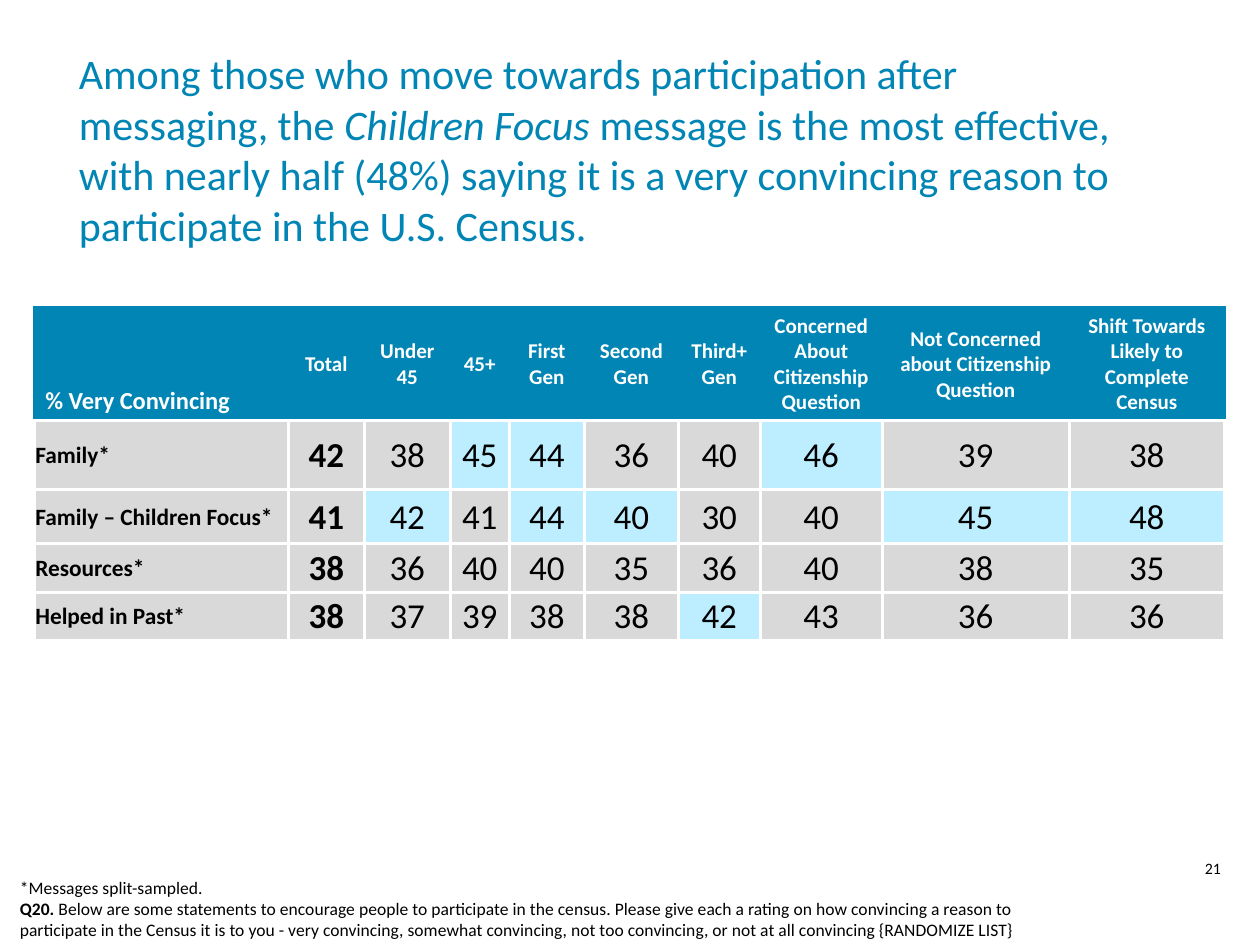
from dataclasses import dataclass

from pptx import Presentation
from pptx.dml.color import RGBColor
from pptx.enum.text import MSO_ANCHOR, MSO_AUTO_SIZE, PP_ALIGN
from pptx.oxml import parse_xml
from pptx.oxml.ns import nsdecls
from pptx.util import Pt


@dataclass(frozen=True)
class Theme:
    font: str = "Calibri"
    blue: str = "0085B4"
    highlight: str = "BDEEFF"
    grey: str = "D9D9D9"
    white: str = "FFFFFF"
    black: str = "000000"
    title_size: float = 18
    corner_size: float = 10.5
    header_size: float = 9
    message_size: float = 10
    score_size: float = 15
    note_size: float = 7.5
    page_size: float = 6.8
    border: float = 1.5


THEME = Theme()

TITLE = [
    ("Among those who move towards participation after messaging, the ", {}),
    ("Children Focus ", {"italic": True}),
    ("message is the most effective, with nearly half (48%) saying it is a very "
     "convincing reason to participate in the U.S. Census.", {}),
]
NOTES = [
    [("*Messages split-sampled.", {})],
    [("Q20. ", {"bold": True}),
     ("Below are some statements to encourage people to participate in the census. "
      "Please give each a rating on how convincing a reason to participate in the Census "
      "it is to you - very convincing, somewhat convincing, not too convincing, or not at "
      "all convincing {RANDOMIZE LIST}", {})],
]
HEADERS = ["% Very Convincing", "Total", "Under 45", "45+", "First Gen", "Second Gen",
           "Third+ Gen", "Concerned About Citizenship Question",
           "Not Concerned about Citizenship Question",
           "Shift Towards Likely to Complete Census"]
SCORES = {
    "Family*": [42, 38, 45, 44, 36, 40, 46, 39, 38],
    "Family – Children Focus*": [41, 42, 41, 44, 40, 30, 40, 45, 48],
    "Resources*": [38, 36, 40, 40, 35, 36, 40, 38, 35],
    "Helped in Past*": [38, 37, 39, 38, 38, 42, 43, 36, 36],
}
COLUMN_WIDTHS = [109, 32.5, 36.9, 25.3, 32.2, 40.3, 35.1, 52.3, 80.1, 66.6]
ROW_HEIGHTS = [48.4, 29.5, 23.1, 20.9, 20.5]


def set_attributes(target, values):
    for name, value in values.items():
        setattr(target, name, value)


def write_runs(p, runs, size, color, align=PP_ALIGN.LEFT):
    p.alignment = align
    for text, extra in runs:
        r = p.add_run()
        r.text = text
        set_attributes(r.font, {"name": THEME.font, "size": Pt(size), **extra})
        r.font.color.rgb = RGBColor.from_string(color)


def add_title(s):
    title = s.shapes.title
    set_attributes(title, {"left": Pt(26.6), "top": Pt(32.4),
                           "width": Pt(460), "height": Pt(62.6)})
    tf = title.text_frame
    set_attributes(tf, {"word_wrap": True, "auto_size": MSO_AUTO_SIZE.NONE,
                        "vertical_anchor": MSO_ANCHOR.MIDDLE})
    write_runs(tf.paragraphs[0], TITLE, THEME.title_size, THEME.blue)


def add_text(s, box, paragraphs, size, align=PP_ALIGN.LEFT):
    tf = s.shapes.add_textbox(*map(Pt, box)).text_frame
    tf.word_wrap = True
    for i, runs in enumerate(paragraphs):
        p = tf.add_paragraph() if i else tf.paragraphs[0]
        write_runs(p, runs, size, THEME.black, align)


def set_borders(cell, colors):
    """Draw the cell edges; colors maps L, R, T and B, in that order."""
    tcPr = cell._tc.get_or_add_tcPr()
    for side, color in colors.items():
        tcPr.append(parse_xml(
            f'<a:ln{side} {nsdecls("a")} w="{Pt(THEME.border)}"><a:solidFill>'
            f'<a:srgbClr val="{color}"/></a:solidFill></a:ln{side}>'))


def fill_cell(cell, text, size, bold, is_header, is_label, fill):
    edge = THEME.blue if is_header else THEME.white
    set_borders(cell, {"L": edge, "R": edge, "T": edge, "B": THEME.white})
    cell.fill.solid()
    cell.fill.fore_color.rgb = RGBColor.from_string(fill)
    side, top, bottom = (4.9, 2.2, 2.2) if is_header else (0.6, 0.6, 0)
    set_attributes(cell, {
        "margin_left": Pt(side), "margin_right": Pt(side),
        "margin_top": Pt(top), "margin_bottom": Pt(bottom),
        "vertical_anchor": MSO_ANCHOR.BOTTOM if is_header and is_label else MSO_ANCHOR.MIDDLE,
    })
    write_runs(cell.text_frame.paragraphs[0], [(text, {"bold": bold})], size,
               THEME.white if is_header else THEME.black,
               PP_ALIGN.LEFT if is_label else PP_ALIGN.CENTER)


def add_score_table(s):
    """Add the table, highlighting the best score of every column after Total."""
    table = s.shapes.add_table(
        len(ROW_HEIGHTS), len(COLUMN_WIDTHS), Pt(14.6), Pt(132),
        Pt(sum(COLUMN_WIDTHS)), Pt(sum(ROW_HEIGHTS))).table
    for column, width in zip(table.columns, COLUMN_WIDTHS):
        column.width = Pt(width)
    for row, height in zip(table.rows, ROW_HEIGHTS):
        row.height = Pt(height)

    for c, text in enumerate(HEADERS):
        size = THEME.header_size if c else THEME.corner_size
        fill_cell(table.cell(0, c), text, size, True, True, c == 0, THEME.blue)

    best = [max(column) for column in zip(*SCORES.values())]
    for i, (message, scores) in enumerate(SCORES.items(), 1):
        fill_cell(table.cell(i, 0), message, THEME.message_size, True, False, True, THEME.grey)
        for c, score in enumerate(scores, 1):
            is_total = c == 1
            is_best = score == best[c - 1] and not is_total
            fill_cell(table.cell(i, c), str(score), THEME.score_size, is_total, False, False,
                      THEME.highlight if is_best else THEME.grey)


def main():
    prs = Presentation()
    prs.slide_width, prs.slide_height = Pt(540), Pt(405)
    s = prs.slides.add_slide(prs.slide_layouts.get_by_name("Title Only"))
    add_title(s)
    add_text(s, (499.7, 364.3, 40.3, 18), [[("21", {})]], THEME.page_size, PP_ALIGN.CENTER)
    add_text(s, (1.4, 372.2, 450, 34.6), NOTES, THEME.note_size)
    add_score_table(s)
    prs.save("out.pptx")


if __name__ == "__main__":
    main()
